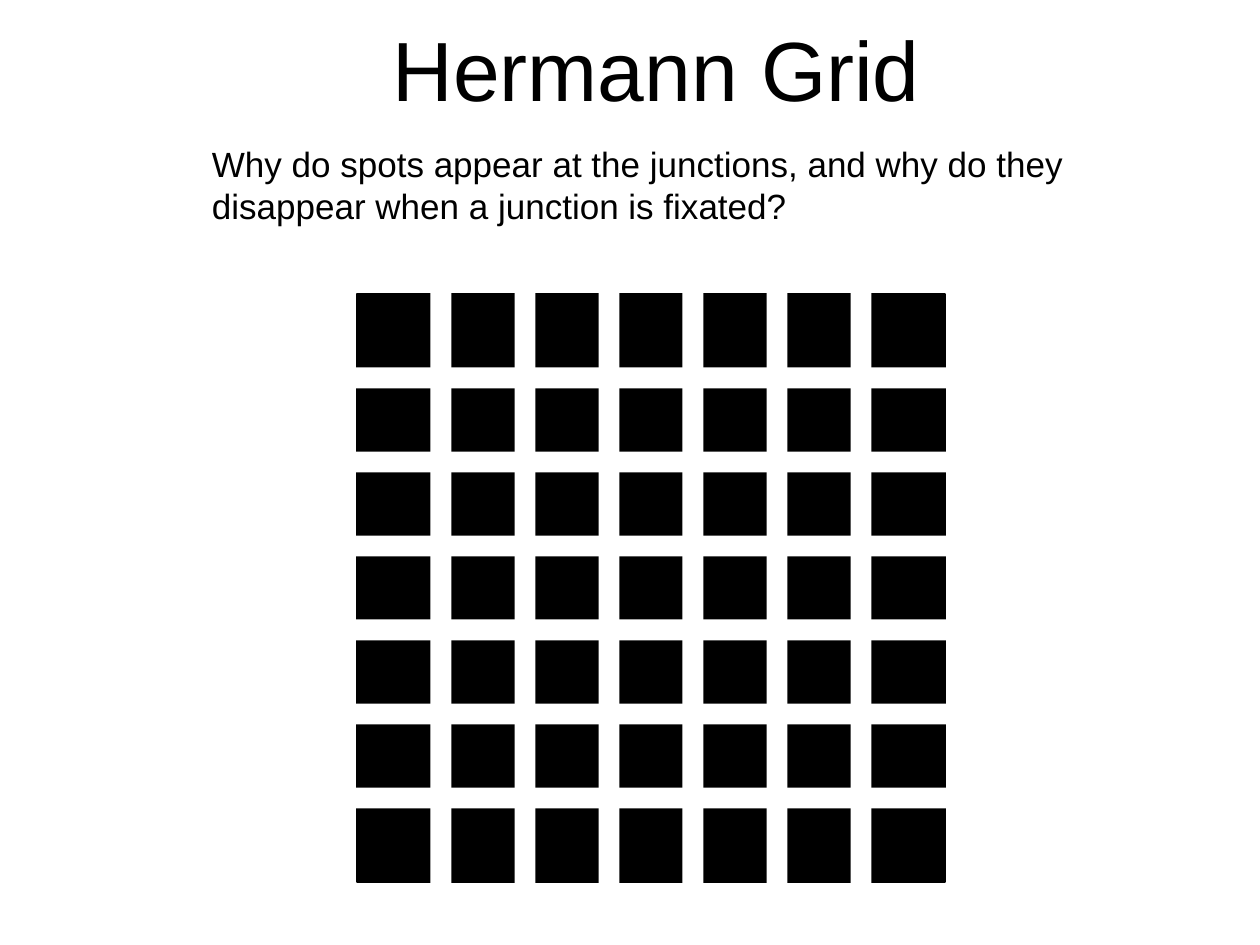
from pptx import Presentation
from pptx.dml.color import RGBColor
from pptx.enum import shapes, text
from pptx.util import Pt

BLACK, WHITE = "000000", "FFFFFF"
PITCH, STREET, STREET_LENGTH = 48, 12, 378
# How far each street starts before the edge of the black square
ROW_OVERHANGS = [18, 18, 18, 18, 12, 24]
COLUMN_OVERHANGS = [24, 18, 12, 6, 18, 24]


def color(value):
    return RGBColor.from_string(value)


def add_text(frame, words, size, align):
    frame.word_wrap = True
    paragraph = frame.paragraphs[0]
    paragraph.alignment = align
    run = paragraph.add_run()
    run.text = words
    run.font.name = "Arial"
    run.font.size = Pt(size)
    run.font.color.rgb = color(BLACK)


def add_title(slide, left, top, width, height):
    title = slide.shapes.title
    title.left, title.top = Pt(left), Pt(top)
    title.width, title.height = Pt(width), Pt(height)
    title.text_frame.vertical_anchor = text.MSO_ANCHOR.MIDDLE
    title.text_frame.auto_size = text.MSO_AUTO_SIZE.NONE
    add_text(title.text_frame, "Hermann Grid", 48, text.PP_ALIGN.CENTER)


def add_question(slide, left, top, width, height):
    question = slide.shapes.add_textbox(Pt(left), Pt(top), Pt(width), Pt(height))
    question.text_frame.auto_size = text.MSO_AUTO_SIZE.SHAPE_TO_FIT_TEXT
    add_text(question.text_frame,
             "Why do spots appear at the junctions, and why do they "
             "disappear when a junction is fixated?",
             20, text.PP_ALIGN.LEFT)


def add_block(group, left, top, width, height, fill, line=None):
    block = group.shapes.add_shape(shapes.MSO_SHAPE.RECTANGLE,
                                   Pt(left), Pt(top), Pt(width), Pt(height))
    block.shadow.inherit = False
    block.fill.solid()
    block.fill.fore_color.rgb = color(fill)
    if line:
        block.line.color.rgb = color(line)
        block.line.width = Pt(0.75)
    else:
        block.line.fill.background()


def add_grid(slide, left, top, size):
    grid = slide.shapes.add_group_shape()
    add_block(grid, left, top, size, size, BLACK, BLACK)
    first = PITCH - STREET / 2
    # Horizontal streets
    for i, overhang in enumerate(ROW_OVERHANGS):
        add_block(grid, left - overhang, top + first + i * PITCH,
                  STREET_LENGTH, STREET, WHITE)
    # Vertical streets
    for i, overhang in enumerate(COLUMN_OVERHANGS):
        add_block(grid, left + first + i * PITCH, top - overhang,
                  STREET, STREET_LENGTH, WHITE)


def main():
    deck = Presentation()
    deck.slide_width, deck.slide_height = Pt(720), Pt(540)
    slide = deck.slides.add_slide(deck.slide_layouts[5])
    slide.background.fill.solid()
    slide.background.fill.fore_color.rgb = color(WHITE)

    add_title(slide, 150, 6, 450, 66)
    add_grid(slide, 204, 168, 336)
    add_question(slide, 114, 78, 540, 55.5)
    deck.save("out.pptx")


if __name__ == "__main__":
    main()
